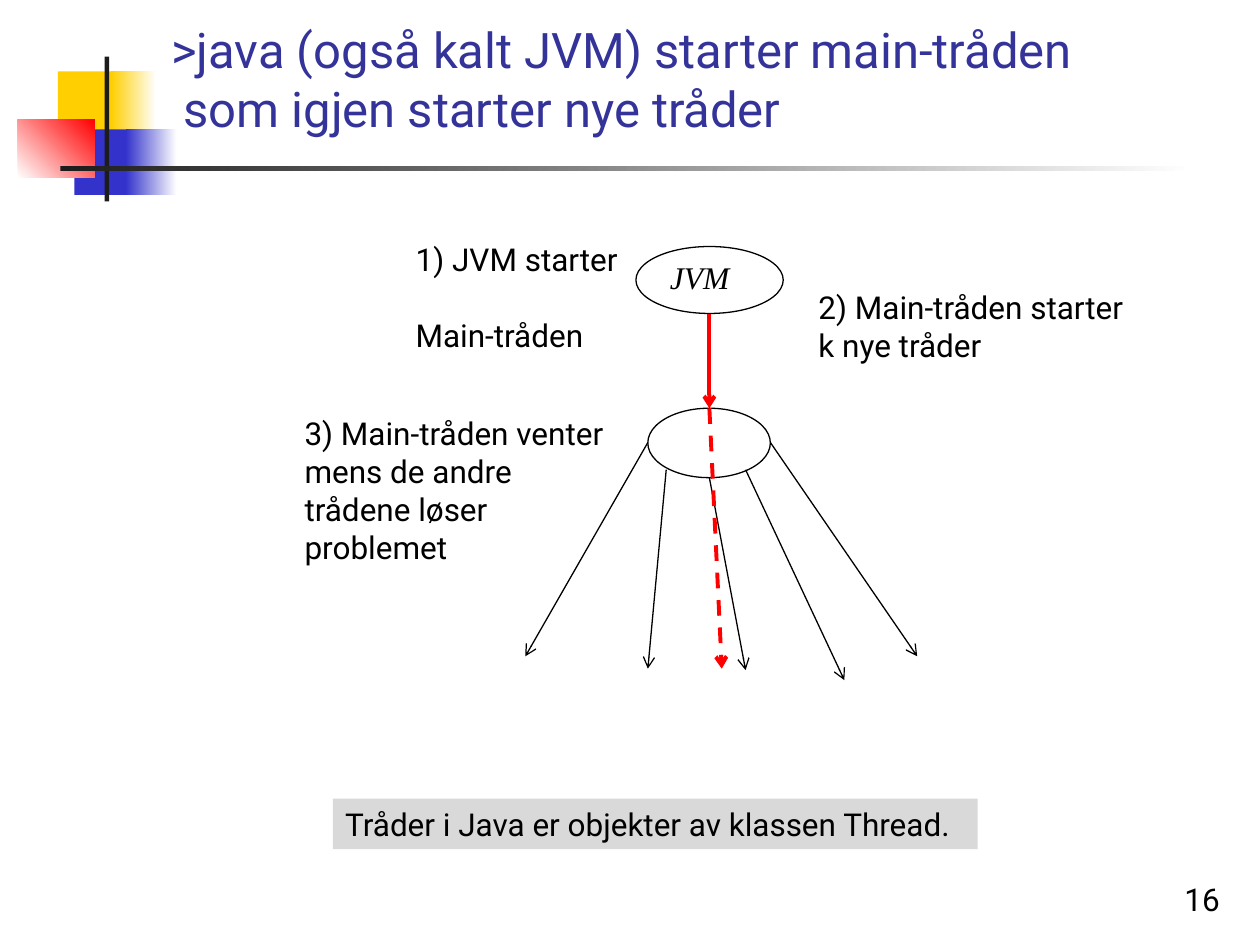
from lxml.etree import SubElement
from pptx import Presentation
from pptx.dml.color import RGBColor
from pptx.enum.dml import MSO_LINE
from pptx.enum.shapes import MSO_CONNECTOR, MSO_SHAPE
from pptx.enum.text import MSO_ANCHOR, MSO_AUTO_SIZE, PP_ALIGN
from pptx.oxml.ns import qn
from pptx.util import Cm, Pt

BODY_FONT = "Roboto"
BLACK, WHITE, RED = "000000", "FFFFFF", "FF0000"
YELLOW, BLUE, CHARCOAL = "FFCF01", "3333CC", "1C1C1C"
TITLE_BLUE, GREY = "333399", "D9D9D9"


def color(value):
    return RGBColor.from_string(value)


def place(box, left, top, width, height):
    return Cm(box[0] + left), Cm(box[1] + top), Cm(width), Cm(height)


def format_paragraph(paragraph, size=18, text_color=BLACK, font_name=BODY_FONT,
                     alignment=PP_ALIGN.LEFT):
    paragraph.alignment = alignment
    paragraph.font.name = font_name
    paragraph.font.size = Pt(size)
    paragraph.font.color.rgb = color(text_color)


def add_plain_shape(slide, kind, position, fills=(), outline=None, angle=0):
    shape = slide.shapes.add_shape(kind, *position)
    shape.shadow.inherit = False
    if len(fills) == 2:
        shape.fill.gradient()
        shape.fill.gradient_angle = angle
        for stop, value in zip(shape.fill.gradient_stops, fills):
            stop.color.rgb = color(value)
    elif fills:
        shape.fill.solid()
        shape.fill.fore_color.rgb = color(fills[0])
    else:
        shape.fill.background()
    if outline:
        shape.line.color.rgb = color(outline)
        shape.line.width = Pt(0.75)
    else:
        shape.line.fill.background()
    return shape


def add_arrow(slide, box, start, end, line_color=BLACK, width=0.75, dash=None):
    points = [Cm(origin + offset) for point in (start, end)
              for origin, offset in zip(box, point)]
    arrow = slide.shapes.add_connector(MSO_CONNECTOR.STRAIGHT, *points)
    arrow.line.color.rgb = color(line_color)
    arrow.line.width = Pt(width)
    if dash:
        arrow.line.dash_style = dash
    SubElement(arrow.line._get_or_add_ln(), qn("a:tailEnd"), type="arrow")
    SubElement(arrow._element.spPr, qn("a:effectLst"))


def add_label(slide, position, lines, gap=0):
    frame = slide.shapes.add_textbox(*position).text_frame
    frame.word_wrap = False
    frame.text = "\n".join(lines)
    for paragraph in frame.paragraphs:
        format_paragraph(paragraph)
    for paragraph in frame.paragraphs[1:]:
        paragraph.space_before = Pt(gap)


def add_decoration(slide, box):
    parts = [
        ((0.81, 0.3, 1.22, 1.32), (YELLOW,), 0),
        ((1.88, 0.3, 0.91, 1.32), (YELLOW, WHITE), 0),
        ((1.14, 1.47, 1.17, 1.32), (BLUE,), 0),
        ((2.18, 1.47, 1.02, 1.32), (BLUE, WHITE), 0),
        ((0, 1.27, 1.55, 1.17), (WHITE, RED), 45),
        ((1.75, 0, 0.09, 2.92), (CHARCOAL,), 0),
        ((0.86, 2.21, 22.86, 0.09), (CHARCOAL, WHITE), 0),
    ]
    for position, fills, angle in parts:
        add_plain_shape(slide, MSO_SHAPE.RECTANGLE, place(box, *position), fills, angle=angle)


def add_title(slide, box):
    title = slide.shapes.title
    title.left, title.top, title.width, title.height = place(box, 0, 0, 21.64, 2.31)
    frame = title.text_frame
    frame.auto_size = MSO_AUTO_SIZE.NONE
    frame.vertical_anchor = MSO_ANCHOR.BOTTOM
    paragraph = frame.paragraphs[0]
    paragraph.text = ">java (også kalt JVM) starter main-tråden\n som igjen starter nye tråder"
    format_paragraph(paragraph, 28, TITLE_BLUE)


def add_thread_diagram(slide, box):
    center = 8.41
    jvm = add_plain_shape(slide, MSO_SHAPE.OVAL, place(box, 6.93, 0.25, 2.97, 1.35),
                          outline=BLACK)
    jvm.text_frame.vertical_anchor = MSO_ANCHOR.TOP
    paragraph = jvm.text_frame.paragraphs[0]
    paragraph.text = "JVM"
    paragraph.line_spacing = 0.9
    format_paragraph(paragraph, font_name="Times New Roman")
    paragraph.font.italic = True

    add_arrow(slide, box, (center, 1.6), (center, 3.51), RED, 2.25)
    add_label(slide, place(box, 2.24, 0, 4.7, 1.8), ["1) JVM starter ", "Main-tråden"], gap=21.5)
    add_plain_shape(slide, MSO_SHAPE.OVAL, place(box, 7.17, 3.51, 2.47, 1.4), outline=BLACK)

    thread_arrows = [
        ((7.17, 4.2), (4.7, 8.51)),
        ((7.54, 4.75), (7.17, 8.76)),
        ((center, 4.91), (9.14, 8.79)),
        ((9.14, 4.75), (11.13, 8.99)),
        ((9.64, 4.2), (12.6, 8.51)),
    ]
    for start, end in thread_arrows:
        add_arrow(slide, box, start, end)

    add_label(slide, place(box, 0, 3.51, 6.71, 3.33),
              ["3) Main-tråden venter", "mens de andre ", "trådene løser", "problemet"])
    add_arrow(slide, box, (center, 3.51), (8.66, 8.76), RED, 2.25, MSO_LINE.DASH)
    add_label(slide, place(box, 10.36, 0.97, 6.76, 1.8),
              ["2) Main-tråden starter", "k nye tråder"])


def add_caption(slide, box):
    caption = add_plain_shape(slide, MSO_SHAPE.RECTANGLE, place(box, 0, 0, 13, 1.02), (GREY,))
    caption.text_frame.text = "Tråder i Java er objekter av klassen Thread."
    format_paragraph(caption.text_frame.paragraphs[0])


def add_page_number(slide, box):
    frame = slide.shapes.add_textbox(*place(box, 0, 0, 5.28, 1.27)).text_frame
    frame.word_wrap = True
    frame.vertical_anchor = MSO_ANCHOR.BOTTOM
    frame.text = "16"
    format_paragraph(frame.paragraphs[0], alignment=PP_ALIGN.RIGHT)


def main():
    presentation = Presentation()
    presentation.slide_width, presentation.slide_height = Cm(25.4), Cm(19.05)
    slide = presentation.slides.add_slide(presentation.slide_layouts[5])
    add_decoration(slide, (0.36, 1.14))
    add_title(slide, (3.2, 0.58))
    add_thread_diagram(slide, (5.89, 4.72))
    add_caption(slide, (6.71, 16.1))
    add_page_number(slide, (19.56, 17.35))
    presentation.save("out.pptx")


if __name__ == "__main__":
    main()
